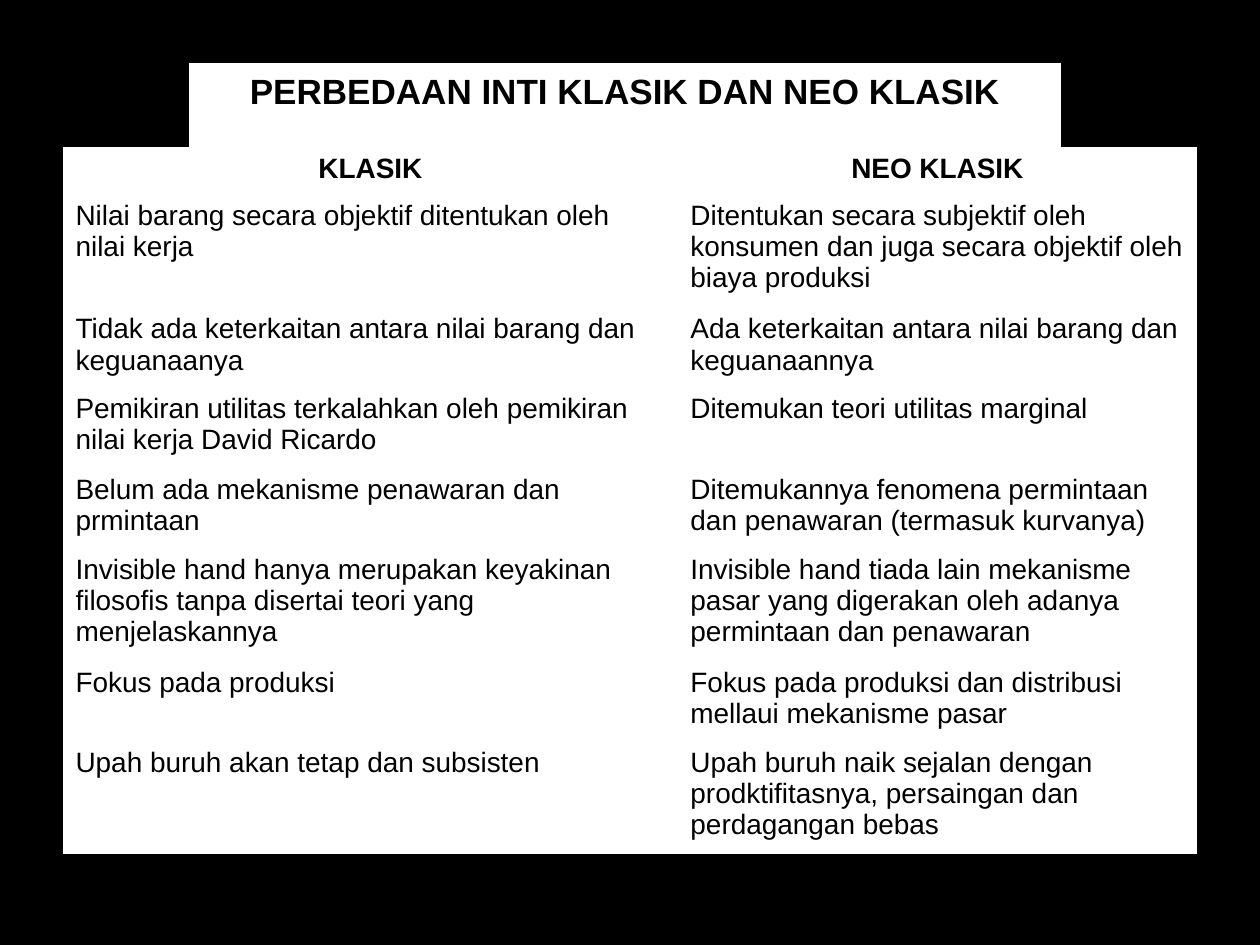
"""Build a slide comparing classical and neoclassical economics."""
import pptx
import pptx.dml.color
import pptx.enum.text
import pptx.oxml.ns
import pptx.util

Inches = pptx.util.Inches
ALIGN = pptx.enum.text.PP_ALIGN
BLACK = pptx.dml.color.RGBColor(0x00, 0x00, 0x00)
WHITE = pptx.dml.color.RGBColor(0xFF, 0xFF, 0xFF)
NO_STYLE = "{2D5ABB26-0587-4C30-8999-92F81FD0307C}"

COL_WIDTHS = [4.88, 4.12]
ROW_HEIGHTS = [0.37, 0.9, 0.63, 0.64, 0.63, 0.9, 0.63, 0.9]
ROWS = [
    ("KLASIK", "NEO KLASIK"),
    ("Nilai barang secara objektif ditentukan oleh nilai kerja",
     "Ditentukan secara subjektif oleh konsumen dan juga secara objektif oleh biaya produksi"),
    ("Tidak ada keterkaitan antara nilai barang dan keguanaanya",
     "Ada keterkaitan antara nilai barang dan keguanaannya"),
    ("Pemikiran utilitas terkalahkan oleh pemikiran nilai kerja David Ricardo",
     "Ditemukan teori utilitas marginal"),
    ("Belum ada mekanisme penawaran dan prmintaan",
     "Ditemukannya fenomena permintaan dan penawaran (termasuk kurvanya)"),
    ("Invisible hand hanya merupakan keyakinan filosofis tanpa disertai teori yang menjelaskannya",
     "Invisible hand tiada lain mekanisme pasar yang digerakan oleh adanya permintaan dan penawaran"),
    ("Fokus pada produksi",
     "Fokus pada produksi dan distribusi mellaui mekanisme pasar"),
    ("Upah buruh akan tetap dan subsisten",
     "Upah buruh naik sejalan dengan prodktifitasnya, persaingan dan perdagangan bebas"),
]


def fill_solid(fill, color):
    fill.solid()
    fill.fore_color.rgb = color


def write_text(tf, text, size=16, bold=False, align=ALIGN.LEFT):
    p = tf.paragraphs[0]
    p.alignment = align
    p.space_before = pptx.util.Pt(0)
    r = p.add_run()
    r.text = text
    r.font.name = "Arial"
    r.font.size = pptx.util.Pt(size)
    r.font.bold = bold
    r.font.color.rgb = BLACK


def add_title(s, text):
    sp = s.shapes.title
    sp.left, sp.top = Inches(1.5), Inches(0.5)
    sp.width, sp.height = Inches(6.92), Inches(0.43)
    fill_solid(sp.fill, WHITE)
    tf = sp.text_frame
    tf.word_wrap = True
    tf.auto_size = pptx.enum.text.MSO_AUTO_SIZE.SHAPE_TO_FIT_TEXT
    tf.vertical_anchor = pptx.enum.text.MSO_ANCHOR.TOP
    write_text(tf, text, size=20, bold=True, align=ALIGN.CENTER)


def add_comparison(s):
    table = s.shapes.add_table(
        len(ROWS), len(COL_WIDTHS), Inches(0.5), Inches(1.17),
        Inches(sum(COL_WIDTHS)), Inches(sum(ROW_HEIGHTS))).table
    table.horz_banding = False
    style = table._tbl.tblPr.find(pptx.oxml.ns.qn("a:tableStyleId"))
    style.text = NO_STYLE
    for column, width in zip(table.columns, COL_WIDTHS):
        column.width = Inches(width)
    for i, (row, height, texts) in enumerate(zip(table.rows, ROW_HEIGHTS, ROWS)):
        row.height = Inches(height)
        header = i == 0
        for cell, text in zip(row.cells, texts):
            fill_solid(cell.fill, WHITE)
            write_text(cell.text_frame, text, bold=header,
                       align=ALIGN.CENTER if header else ALIGN.LEFT)


def main():
    prs = pptx.Presentation()
    prs.slide_width, prs.slide_height = Inches(10), Inches(7.5)
    s = prs.slides.add_slide(prs.slide_layouts.get_by_name("Title Only"))
    fill_solid(s.background.fill, BLACK)
    add_title(s, "PERBEDAAN INTI KLASIK DAN NEO KLASIK")
    add_comparison(s)
    prs.save("out.pptx")


if __name__ == "__main__":
    main()
